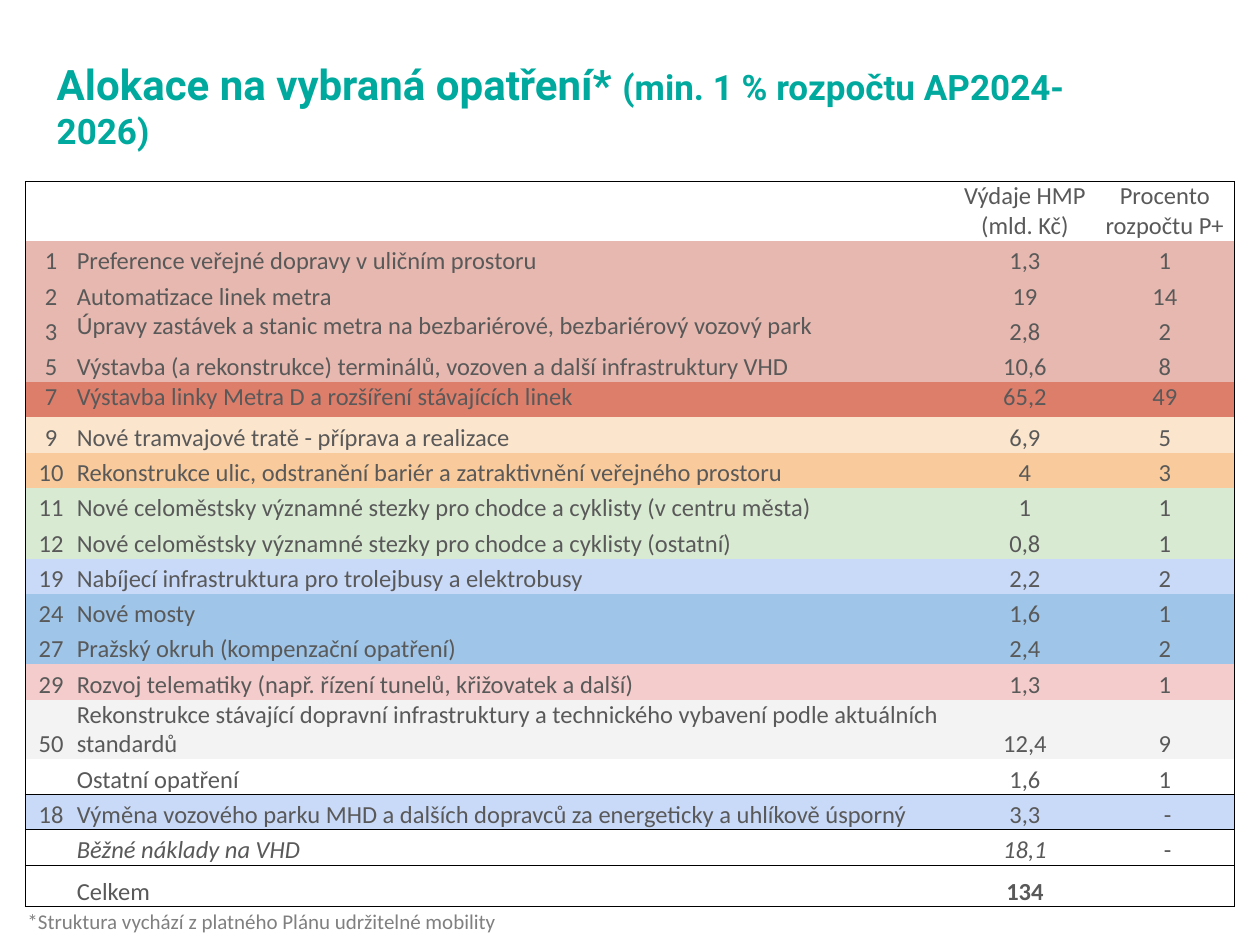
from lxml.etree import SubElement
from pptx import Presentation
from pptx.dml.color import RGBColor
from pptx.enum.text import MSO_ANCHOR, MSO_AUTO_SIZE, PP_ALIGN
from pptx.oxml.ns import qn
from pptx.util import Inches, Pt

NO_STYLE = "{2D5ABB26-0587-4C30-8999-92F81FD0307C}"
ROSE, RED, CREAM, ORANGE = "E6B8AF", "DD7E6B", "FCE5CD", "F9CB9C"
GREEN, PALE_BLUE, BLUE, PINK, GREY = "D9EAD3", "C9DAF8", "9FC5E8", "F4CCCC", "F3F3F3"
COLUMN_WIDTHS = [0.41, 6.97, 1.11, 1.11]
ROW_HEIGHT = 0.28
SPECIAL_HEIGHTS = {0: 0.47, 14: 0.47, 18: 0.33}
ROWS = [
    (None, "", "", "Výdaje HMP (mld. Kč)", "Procento rozpočtu P+"),
    (ROSE, "1", "Preference veřejné dopravy v uličním prostoru", "1,3", "1"),
    (ROSE, "2", "Automatizace linek metra", "19", "14"),
    (ROSE, "3", "Úpravy zastávek a stanic metra na bezbariérové, bezbariérový vozový park", "2,8", "2"),
    (ROSE, "5", "Výstavba (a rekonstrukce) terminálů, vozoven a další infrastruktury VHD", "10,6", "8"),
    (RED, "7", "Výstavba linky Metra D a rozšíření stávajících linek", "65,2", "49"),
    (CREAM, "9", "Nové tramvajové tratě - příprava a realizace", "6,9", "5"),
    (ORANGE, "10", "Rekonstrukce ulic, odstranění bariér a zatraktivnění veřejného prostoru", "4", "3"),
    (GREEN, "11", "Nové celoměstsky významné stezky pro chodce a cyklisty (v centru města)", "1", "1"),
    (GREEN, "12", "Nové celoměstsky významné stezky pro chodce a cyklisty (ostatní)", "0,8", "1"),
    (PALE_BLUE, "19", "Nabíjecí infrastruktura pro trolejbusy a elektrobusy", "2,2", "2"),
    (BLUE, "24", "Nové mosty", "1,6", "1"),
    (BLUE, "27", "Pražský okruh (kompenzační opatření)", "2,4", "2"),
    (PINK, "29", "Rozvoj telematiky (např. řízení tunelů, křižovatek a další)", "1,3", "1"),
    (GREY, "50", "Rekonstrukce stávající dopravní infrastruktury a technického vybavení podle aktuálních standardů", "12,4", "9"),
    (None, "", "Ostatní opatření", "1,6", "1"),
    (PALE_BLUE, "18", "Výměna vozového parku MHD a dalších dopravců za energeticky a uhlíkově úsporný", "3,3", " -"),
    (None, "", "Běžné náklady na VHD", "18,1", " -"),
    (None, "", "Celkem", "134", ""),
]
TOP_RULES = {0, 16, 18}
BOTTOM_RULES = {15, 17, 18}
TOP_ANCHORED = {(3, 1), (5, 0), (5, 1), (5, 2), (5, 3)}
ITALIC_CELLS = {(17, 1), (17, 2)}
BOLD_CELLS = {(18, 2)}


def color(value):
    return RGBColor.from_string(value)


def set_font(font, name, size, value):
    font.name = name
    font.size = Pt(size)
    font.color.rgb = color(value)


def place(shape, box):
    shape.left, shape.top, shape.width, shape.height = map(Inches, box)


def add_title(page, box):
    title = page.shapes.title
    place(title, box)
    frame = title.text_frame
    frame.word_wrap = True
    frame.auto_size = MSO_AUTO_SIZE.NONE
    frame.vertical_anchor = MSO_ANCHOR.MIDDLE
    para = frame.paragraphs[0]
    para.alignment = PP_ALIGN.LEFT
    for text, size in [("Alokace na vybraná opatření* ", 24), ("(min. 1 % rozpočtu AP2024-2026)", 20)]:
        span = para.add_run()
        span.text = text
        set_font(span.font, "Roboto", size, "00A99D")
        span.font.bold = True


def draw_border(cell, side):
    line = SubElement(cell._tc.get_or_add_tcPr(), qn(f"a:ln{side}"), w=str(Pt(0.5)))
    fill = SubElement(line, qn("a:solidFill"))
    SubElement(fill, qn("a:srgbClr"), val="000000")


def border_sides(row, column):
    rules = [
        ("L", column == 0),
        ("R", column == len(COLUMN_WIDTHS) - 1),
        ("T", row in TOP_RULES),
        ("B", row in BOTTOM_RULES),
    ]
    return [side for side, drawn in rules if drawn]


def fill_cell(cell, position, text, fill):
    for side in border_sides(*position):
        draw_border(cell, side)
    if fill:
        cell.fill.solid()
        cell.fill.fore_color.rgb = color(fill)
    else:
        cell.fill.background()
    cell.margin_left = cell.margin_right = cell.margin_top = cell.margin_bottom = 0
    cell.vertical_anchor = MSO_ANCHOR.TOP if position in TOP_ANCHORED else MSO_ANCHOR.BOTTOM
    para = cell.text_frame.paragraphs[0]
    para.alignment = PP_ALIGN.LEFT if position[1] == 1 else PP_ALIGN.CENTER
    set_font(para.font, "Calibri", 14, "595959")
    para.font.bold = position in BOLD_CELLS
    para.font.italic = position in ITALIC_CELLS
    if text:
        para.add_run().text = text
    else:
        SubElement(para._p, qn("a:endParaRPr"), sz="1400")


def add_budget_table(page, box):
    frame = page.shapes.add_table(len(ROWS), len(COLUMN_WIDTHS), *map(Inches, box))
    table = frame.table
    table.first_row = table.horz_banding = False
    table._tbl.tblPr.find(qn("a:tableStyleId")).text = NO_STYLE
    for column, width in zip(table.columns, COLUMN_WIDTHS):
        column.width = Inches(width)
    for row, (fill, *texts) in enumerate(ROWS):
        table.rows[row].height = Inches(SPECIAL_HEIGHTS.get(row, ROW_HEIGHT))
        for column, text in enumerate(texts):
            fill_cell(table.cell(row, column), (row, column), text, fill)


def add_footnote(page, box):
    frame = page.shapes.add_textbox(*map(Inches, box)).text_frame
    frame.word_wrap = True
    frame.auto_size = MSO_AUTO_SIZE.SHAPE_TO_FIT_TEXT
    para = frame.paragraphs[0]
    para.text = "*Struktura vychází z platného Plánu udržitelné mobility"
    set_font(para.font, "Calibri", 12, "808080")


def main():
    deck = Presentation()
    deck.slide_width, deck.slide_height = Inches(10), Inches(7.5)
    page = deck.slides.add_slide(deck.slide_layouts[5])
    add_title(page, (0.35, 0.6, 8.74, 0.47))
    add_budget_table(page, (0.2, 1.44, 9.6, 5.74))
    add_footnote(page, (0.12, 7.16, 9.6, 0.3))
    deck.save("out.pptx")


if __name__ == "__main__":
    main()
